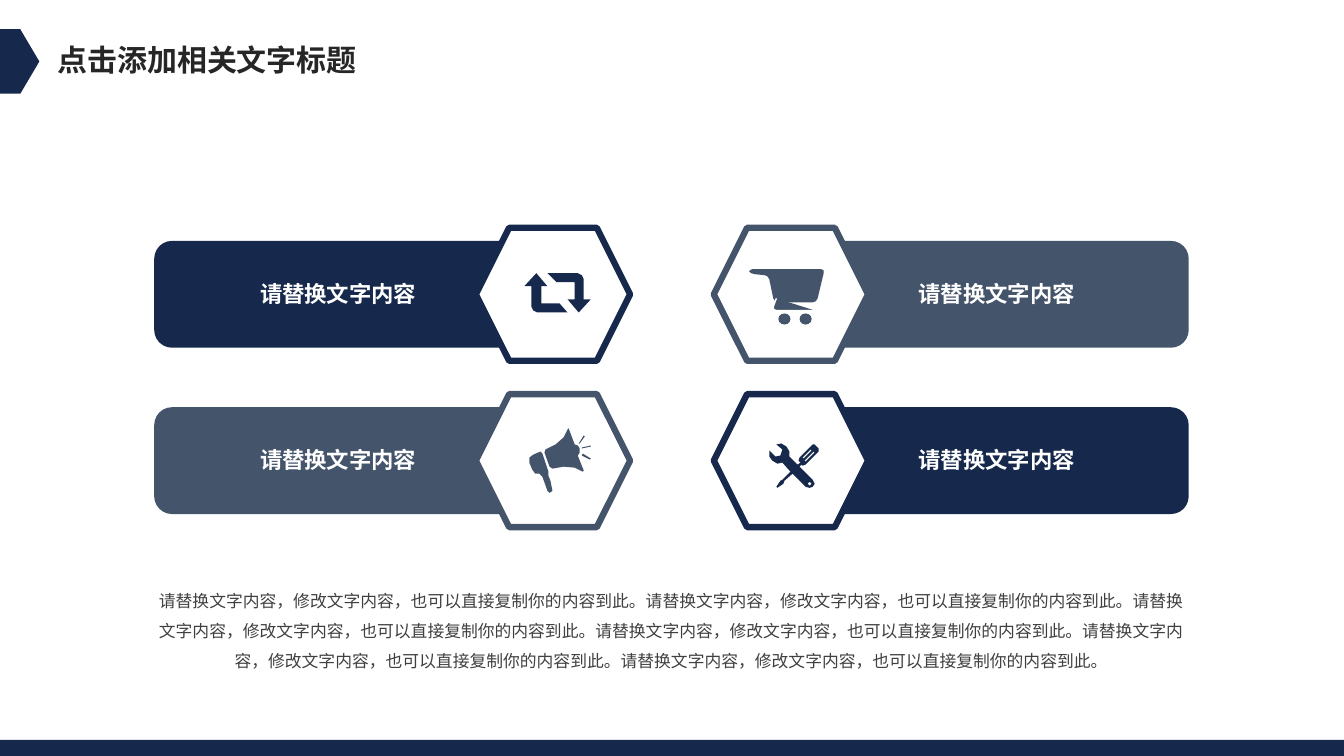
from dataclasses import dataclass

from lxml.etree import SubElement
from pptx import Presentation
from pptx.dml.color import RGBColor
from pptx.enum.shapes import MSO_SHAPE as Shape
from pptx.enum.text import MSO_ANCHOR as Anchor, MSO_AUTO_SIZE as AutoSize, PP_ALIGN as Align
from pptx.oxml.ns import qn
from pptx.util import Inches, Pt


@dataclass(frozen=True)
class Theme:
    font: str = "Noto Sans CJK SC"
    navy: str = "16294C"
    slate: str = "44546A"
    white: str = "FFFFFF"
    title_ink: str = "262626"
    body_ink: str = "404040"
    title_size: float = 21.4
    label_size: float = 16
    body_size: float = 12
    hexagon_line: float = 4.5


class SlideBuilder:
    def __init__(self, slide, theme):
        self.s = slide
        self.theme = theme

    def paint(self, sp, fill, line=None, width=1):
        sp.shadow.inherit = False
        sp.fill.solid()
        sp.fill.fore_color.rgb = RGBColor.from_string(fill)
        if line:
            sp.line.color.rgb = RGBColor.from_string(line)
            sp.line.width = Pt(width)
        else:
            sp.line.fill.background()
        return sp

    def shape(self, kind, box, fill, line=None, width=1, parent=None):
        shapes = (parent or self.s).shapes
        sp = shapes.add_shape(kind, *map(Inches, box))
        return self.paint(sp, fill, line, width)

    def outline(self, parent, contours, fill, line=None, closed=True):
        """Draw one freeform from lists of points; inner contours become holes."""
        first, *others = [[(Inches(x), Inches(y)) for x, y in c] for c in contours]
        builder = parent.shapes.build_freeform(*first[0], scale=1.0)
        builder.add_line_segments(first[1:], close=closed)
        for points in others:
            builder.move_to(*points[0])
            builder.add_line_segments(points[1:], close=closed)
        return self.paint(builder.convert_to_shape(), fill, line)

    def set_text(self, sp, text, size, color, bold=False, align=Align.LEFT,
                 spacing=None, inset=None, wrap=True):
        tf = sp.text_frame
        tf.word_wrap = wrap
        tf.auto_size = AutoSize.SHAPE_TO_FIT_TEXT
        tf.vertical_anchor = Anchor.TOP
        if inset is not None:
            tf.margin_left = tf.margin_right = Inches(inset)
            tf.margin_top = tf.margin_bottom = Inches(inset)
        p = tf.paragraphs[0]
        p.text = text
        p.alignment = align
        if spacing:
            p.line_spacing = spacing
        p.font.size = Pt(size)
        p.font.bold = bold
        p.font.color.rgb = RGBColor.from_string(color)
        p.font.name = self.theme.font
        props = p._p.pPr.find(qn("a:defRPr"))
        SubElement(props, qn("a:ea")).set("typeface", self.theme.font)

    def title(self, text, box):
        sp = self.s.shapes.title
        sp.left, sp.top, sp.width, sp.height = map(Inches, box)
        self.set_text(sp, text, self.theme.title_size, self.theme.title_ink,
                      bold=True, wrap=False)

    def text(self, text, box, size, color, **style):
        sp = self.s.shapes.add_textbox(*map(Inches, box))
        self.set_text(sp, text, size, color, **style)

    def card(self, column, top, color, draw_icon):
        """Draw a bar with its label and a hexagon holding an icon."""
        t = self.theme
        self.shape(Shape.ROUNDED_RECTANGLE, (column.bar, top, 4.2, 1.06), color)
        group = self.s.shapes.add_group_shape()
        self.shape(Shape.HEXAGON, (column.hexagon, top - 0.13, 1.53, 1.32),
                   t.white, color, t.hexagon_line, group)
        draw_icon(self, group, color)
        self.text("请替换文字内容", (column.label, top + 0.39, 2.31, 0.27),
                  t.label_size, t.white, bold=True, align=column.align, inset=0)


@dataclass(frozen=True)
class Column:
    bar: float
    hexagon: float
    label: float
    align: Align


def draw_cycle(b, group, color):
    right_arrow = [(5.79, 2.97), (5.79, 2.77), (5.77, 2.73), (5.73, 2.71), (5.43, 2.71),
                   (5.52, 2.8), (5.7, 2.8), (5.7, 2.97), (5.63, 2.97), (5.74, 3.1),
                   (5.86, 2.97)]
    left_arrow = [(5.37, 3.01), (5.37, 2.84), (5.43, 2.84), (5.32, 2.71), (5.2, 2.84),
                  (5.27, 2.84), (5.27, 3.04), (5.29, 3.08), (5.33, 3.1), (5.63, 3.1),
                  (5.55, 3.01)]
    b.outline(group, [right_arrow, left_arrow], color)


def draw_cart(b, group, color):
    basket = [(8.06, 3), (8.09, 2.99), (8.11, 2.96), (8.17, 2.71), (8.17, 2.68),
              (8.14, 2.67), (7.46, 2.67), (7.43, 2.69), (7.45, 2.71), (7.48, 2.72),
              (7.58, 2.73), (7.61, 2.74), (7.63, 2.77), (7.67, 2.96), (7.69, 2.99),
              (7.73, 3)]
    frame = [(7.7, 2.96), (7.67, 3.04), (7.67, 3.07), (7.7, 3.08), (8.08, 3.08)]
    b.outline(group, [basket], color)
    for wheel in (7.72, 7.93):
        b.shape(Shape.OVAL, (wheel, 3.11, 0.12, 0.11), color, parent=group)
    b.outline(group, [frame], color, b.theme.white, closed=False)


def draw_megaphone(b, group, color):
    handle = [(5.44, 4.72), (5.44, 4.68), (5.38, 4.5), (5.36, 4.48), (5.29, 4.51),
              (5.25, 4.54), (5.25, 4.59), (5.28, 4.66), (5.31, 4.7), (5.35, 4.7),
              (5.38, 4.73), (5.43, 4.87), (5.45, 4.89), (5.48, 4.87), (5.47, 4.82),
              (5.46, 4.77)]
    horn = [(5.73, 4.52), (5.75, 4.49), (5.75, 4.45), (5.73, 4.42), (5.7, 4.41),
            (5.64, 4.25), (5.63, 4.26), (5.59, 4.34), (5.51, 4.41), (5.41, 4.46),
            (5.4, 4.49), (5.45, 4.63), (5.48, 4.65), (5.59, 4.63), (5.7, 4.64),
            (5.78, 4.68), (5.79, 4.67)]
    rays = [
        [(5.8, 4.33), (5.79, 4.32), (5.74, 4.4), (5.75, 4.4)],
        [(5.77, 4.52), (5.85, 4.56), (5.86, 4.55), (5.78, 4.5)],
        [(5.77, 4.45), (5.86, 4.43), (5.86, 4.42), (5.77, 4.44)],
    ]
    for part in (handle, horn, *rays):
        b.outline(group, [part], color)


def draw_tools(b, group, color):
    tools = [(8.12, 4.45), (8.08, 4.41), (8.06, 4.41), (8.04, 4.43), (7.93, 4.54),
             (7.92, 4.57), (7.94, 4.59), (7.91, 4.61), (7.83, 4.53), (7.83, 4.48),
             (7.8, 4.43), (7.75, 4.4), (7.7, 4.41), (7.76, 4.46), (7.74, 4.52),
             (7.69, 4.53), (7.63, 4.47), (7.63, 4.53), (7.66, 4.57), (7.71, 4.6),
             (7.76, 4.59), (7.84, 4.68), (7.76, 4.76), (7.74, 4.77), (7.7, 4.83),
             (7.71, 4.84), (7.77, 4.8), (7.78, 4.77), (7.86, 4.7), (7.99, 4.83),
             (8.03, 4.84), (8.06, 4.83), (8.08, 4.8), (8.06, 4.76), (7.93, 4.63),
             (7.95, 4.61), (7.96, 4.62), (7.99, 4.61), (8.11, 4.49), (8.12, 4.48)]
    bolt_hole = [(8.03, 4.78), (8.05, 4.8), (8.03, 4.82), (8.01, 4.8)]
    slots = [
        [(7.97, 4.55), (7.96, 4.54), (8.04, 4.46), (8.05, 4.47)],
        [(7.99, 4.58), (7.98, 4.57), (8.07, 4.48), (8.08, 4.49)],
    ]
    b.outline(group, [tools, bolt_hole, *slots], color)


def main():
    prs = Presentation()
    prs.slide_width, prs.slide_height = Inches(13.33), Inches(7.5)
    theme = Theme()
    b = SlideBuilder(prs.slides.add_slide(prs.slide_layouts[5]), theme)

    b.title("点击添加相关文字标题", (0.47, 0.36, 3.2, 0.46))
    marker = b.shape(Shape.PENTAGON, (0, 0.29, 0.39, 0.64), theme.navy)
    marker.adjustments[0] = 0.484
    b.shape(Shape.RECTANGLE, (0, 7.34, 13.33, 0.16), theme.navy)

    left = Column(bar=1.53, hexagon=4.72, label=1.82, align=Align.RIGHT)
    right = Column(bar=7.59, hexagon=7.08, label=9.11, align=Align.LEFT)
    upper, lower = 2.39, 4.04
    b.card(left, upper, theme.navy, draw_cycle)
    b.card(right, upper, theme.slate, draw_cart)
    b.card(left, lower, theme.slate, draw_megaphone)
    b.card(right, lower, theme.navy, draw_tools)

    b.text("请替换文字内容，修改文字内容，也可以直接复制你的内容到此。" * 6,
           (1.41, 5.71, 10.5, 1.01), theme.body_size, theme.body_ink,
           align=Align.CENTER, spacing=1.5)
    prs.save("out.pptx")


if __name__ == "__main__":
    main()
